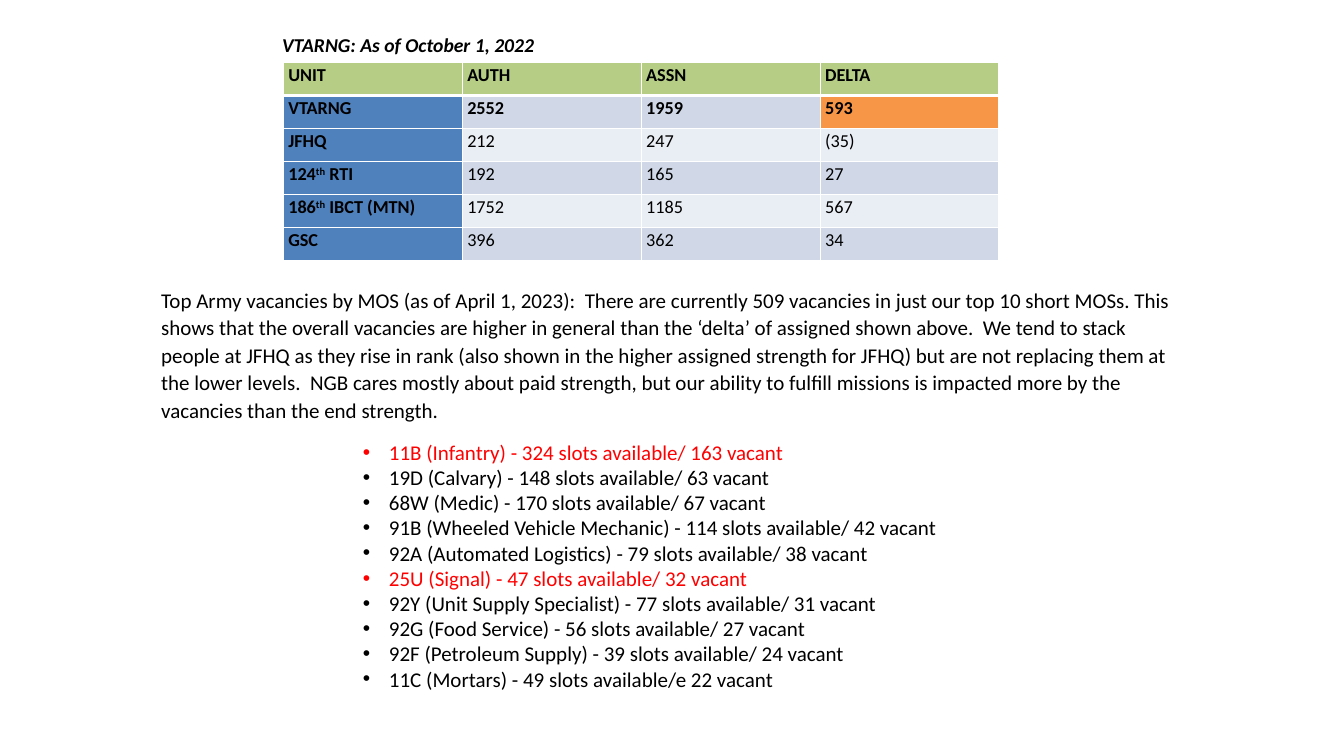
from pptx import Presentation
from pptx.dml.color import RGBColor as Color
from pptx.enum.text import MSO_AUTO_SIZE as AutoSize
from pptx.oxml.ns import qn
from pptx.util import Inches, Pt
from lxml.etree import SubElement

COLORS = {
    "text": "000000", "alert": "FF0000", "line": "FFFFFF", "header": "B5CD85",
    "unit": "4F81BD", "delta": "F79646", "odd": "D0D8E8", "even": "E9EDF4",
}
TITLE = "VTARNG: As of October 1, 2022"
STRENGTH = [
    ("UNIT", "AUTH", "ASSN", "DELTA"),
    ("VTARNG", "2552", "1959", "593"),
    ("JFHQ", "212", "247", "(35)"),
    ("124th RTI", "192", "165", "27"),
    ("186th IBCT (MTN)", "1752", "1185", "567"),
    ("GSC", "396", "362", "34"),
]
SUMMARY = (
    "Top Army vacancies by MOS (as of April 1, 2023):  There are currently 509 vacancies "
    "in just our top 10 short MOSs. This shows that the overall vacancies are higher in "
    "general than the ‘delta’ of assigned shown above.  We tend to stack people at JFHQ as "
    "they rise in rank (also shown in the higher assigned strength for JFHQ) but are not "
    "replacing them at the lower levels.  NGB cares mostly about paid strength, but our "
    "ability to fulfill missions is impacted more by the vacancies than the end strength."
)
VACANCIES = [
    ("11B (Infantry) - 324 slots available/ 163 vacant", "alert"),
    ("19D (Calvary) - 148 slots available/ 63 vacant", "text"),
    ("68W (Medic) - 170 slots available/ 67 vacant", "text"),
    ("91B (Wheeled Vehicle Mechanic) - 114 slots available/ 42 vacant", "text"),
    ("92A (Automated Logistics) - 79 slots available/ 38 vacant", "text"),
    ("25U (Signal) - 47 slots available/ 32 vacant", "alert"),
    ("92Y (Unit Supply Specialist) - 77 slots available/ 31 vacant", "text"),
    ("92G (Food Service) - 56 slots available/ 27 vacant", "text"),
    ("92F (Petroleum Supply) - 39 slots available/ 24 vacant", "text"),
    ("11C (Mortars) - 49 slots available/e 22 vacant", "text"),
]
TABLE_AREA = (2.81, 0.62, 7.1, 1.97)
TITLE_AREA = (2.7, 0.28, 2.72, 0.34)
SUMMARY_AREA = (1.5, 2.78, 10.34, 1.5)
VACANCY_AREA = (3.5, 4.31, 6.34, 2.88)
CELL_MARGINS = {
    "margin_left": Inches(0.05), "margin_right": Inches(0.05),
    "margin_top": 0, "margin_bottom": 0,
}


def apply(target, values):
    for name, value in values.items():
        setattr(target, name, value)


def add_span(para, text, size, color="text", **styles):
    span = para.add_run()
    span.text = text
    apply(span.font, {"name": "Calibri", "size": Pt(size), **styles})
    span.font.color.rgb = Color.from_string(COLORS[color])
    return span


def add_box(page, area, wrap=True):
    frame = page.shapes.add_textbox(*map(Inches, area)).text_frame
    apply(frame, {"word_wrap": wrap, "auto_size": AutoSize.NONE})
    return frame


def add_borders(cell, bottom):
    properties = cell._tc.get_or_add_tcPr()
    for side, width in (("L", 1), ("R", 1), ("T", 1), ("B", bottom)):
        line = SubElement(properties, qn(f"a:ln{side}"), w=str(Pt(width)))
        fill = SubElement(line, qn("a:solidFill"))
        SubElement(fill, qn("a:srgbClr"), val=COLORS["line"])


def cell_color(row, column):
    if row == 0:
        return "header"
    if column == 0:
        return "unit"
    if (row, column) == (1, 3):
        return "delta"
    return "odd" if row % 2 else "even"


def fill_cell(cell, text, row, column):
    apply(cell, CELL_MARGINS)
    add_borders(cell, 3 if row == 0 else 1)
    cell.fill.solid()
    cell.fill.fore_color.rgb = Color.from_string(COLORS[cell_color(row, column)])
    para = cell.text_frame.paragraphs[0]
    para.line_spacing = 1.07
    bold = row < 2 or column == 0
    number, ordinal, name = text.partition("th ")
    add_span(para, number, 13, bold=bold)
    if ordinal:
        raised = add_span(para, "th", 13, bold=bold)
        raised._r.get_or_add_rPr().set("baseline", "30000")
        add_span(para, " " + name, 13, bold=bold)


def add_strength_table(page):
    size = len(STRENGTH), len(STRENGTH[0])
    table = page.shapes.add_table(*size, *map(Inches, TABLE_AREA)).table
    table.horz_banding = False
    for row, values in enumerate(STRENGTH):
        for column, text in enumerate(values):
            fill_cell(table.cell(row, column), text, row, column)


def add_vacancies(page):
    frame = add_box(page, VACANCY_AREA)
    for index, (text, color) in enumerate(VACANCIES):
        para = frame.add_paragraph() if index else frame.paragraphs[0]
        properties = para._p.get_or_add_pPr()
        indent = Inches(0.26)
        properties.set("marL", str(indent))
        properties.set("indent", str(-indent))
        SubElement(properties, qn("a:buFont"), typeface="Arial")
        SubElement(properties, qn("a:buChar"), char="•")
        add_span(para, text, 15, color)


def main():
    deck = Presentation()
    apply(deck, {"slide_width": Inches(13.33), "slide_height": Inches(7.5)})
    page = deck.slides.add_slide(deck.slide_layouts[6])
    add_strength_table(page)
    title = add_box(page, TITLE_AREA, wrap=False).paragraphs[0]
    add_span(title, TITLE, 14, bold=True, italic=True)
    summary = add_box(page, SUMMARY_AREA).paragraphs[0]
    summary.line_spacing = 1.09
    add_span(summary, SUMMARY, 15)
    add_vacancies(page)
    deck.save("out.pptx")


if __name__ == "__main__":
    main()
